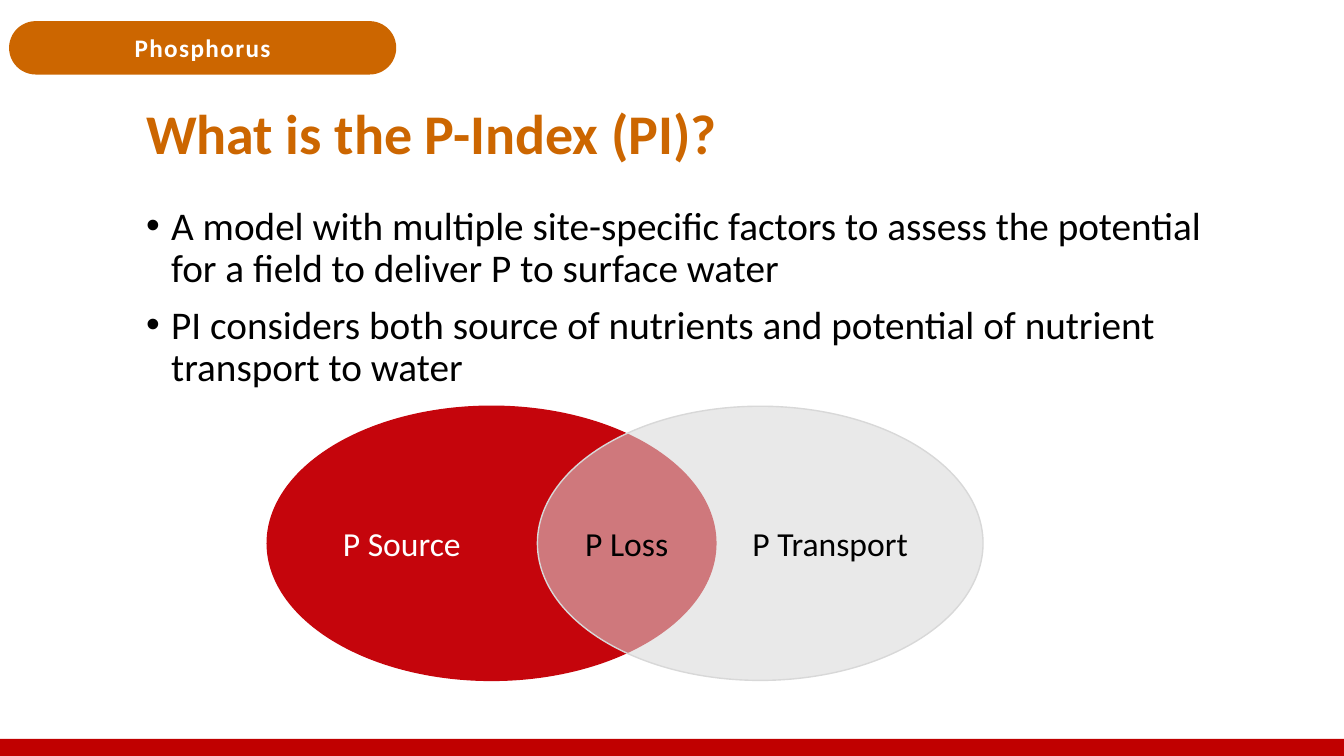
from dataclasses import dataclass

from lxml import etree
from pptx import Presentation
from pptx.dml.color import RGBColor
from pptx.enum.shapes import MSO_SHAPE
from pptx.enum.text import MSO_ANCHOR, MSO_AUTO_SIZE, PP_ALIGN
from pptx.oxml.ns import qn
from pptx.util import Pt

LEFT, CENTER, RIGHT = PP_ALIGN.LEFT, PP_ALIGN.CENTER, PP_ALIGN.RIGHT
TOP, MIDDLE = MSO_ANCHOR.TOP, MSO_ANCHOR.MIDDLE
RECTANGLE, PILL, OVAL = MSO_SHAPE.RECTANGLE, MSO_SHAPE.ROUNDED_RECTANGLE, MSO_SHAPE.OVAL
TITLE_ONLY = 5
EMU_PER_PX = 9144


@dataclass(frozen=True)
class Theme:
    font: str = "Calibri"
    orange: str = "CC6600"
    bar: str = "C00000"
    source: str = "C5050C"
    transport: str = "D8D8D8"
    white: str = "FFFFFF"
    black: str = "000000"
    title_size: int = 40
    body_size: int = 28
    label_size: int = 24
    tag_size: int = 18


THEME = Theme()

SLIDE_WIDTH, SLIDE_HEIGHT = 1333, 750
BAR_HEIGHT = 17
CONTENT_LEFT, CONTENT_WIDTH = 135, 1089
OVAL_TOP, OVAL_HEIGHT = 403, 272
BULLET_INDENT = 25

TAG = "Phosphorus"
TITLE = "What is the P-Index (PI)?"
BULLETS = [
    "A model with multiple site-specific factors to assess the potential for a field to deliver P to surface water",
    "PI considers both source of nutrients and potential of nutrient transport to water",
]
OVALS = [
    dict(text="P Source", left=265, width=445, fill=THEME.source, alpha=100,
         color=THEME.white, align=LEFT),
    dict(text="P Transport", left=533, width=442, fill=THEME.transport, alpha=55,
         color=THEME.black, align=RIGHT),
]
OVERLAP = "P Loss"


def px(*lengths):
    return [length * EMU_PER_PX for length in lengths]


def write(shape, text, size, color=THEME.black, bold=False, align=LEFT, anchor=MIDDLE,
          line_spacing=1.0, space_before=0, tracking=0, bullet=False):
    frame = shape.text_frame
    frame.word_wrap = True
    frame.auto_size = MSO_AUTO_SIZE.NONE
    frame.vertical_anchor = anchor
    lines = [text] if isinstance(text, str) else text
    for index, line in enumerate(lines):
        paragraph = frame.add_paragraph() if index else frame.paragraphs[0]
        paragraph.alignment = align
        paragraph.line_spacing = line_spacing
        paragraph.space_before = Pt(space_before if index else 0)
        if bullet:
            properties = paragraph._p.get_or_add_pPr()
            indent = BULLET_INDENT * EMU_PER_PX
            properties.set("marL", str(indent))
            properties.set("indent", str(-indent))
            etree.SubElement(properties, qn("a:buFont"), typeface="Arial")
            etree.SubElement(properties, qn("a:buChar"), char="•")
        run = paragraph.add_run()
        run.text = line
        run.font.name = THEME.font
        run.font.size = Pt(size)
        run.font.bold = bold
        run.font.color.rgb = RGBColor.from_string(color)
        if tracking:
            run.font._element.set("spc", str(tracking * 100))


def add_filled(slide, kind, box, fill, line=None, alpha=100):
    shape = slide.shapes.add_shape(kind, *px(*box))
    shape.shadow.inherit = False
    shape.fill.solid()
    shape.fill.fore_color.rgb = RGBColor.from_string(fill)
    if alpha < 100:
        color = shape.fill._xPr.find(qn("a:solidFill"))[0]
        etree.SubElement(color, qn("a:alpha"), val=str(alpha * 1000))
    if line:
        shape.line.color.rgb = RGBColor.from_string(line)
        shape.line.width = Pt(1)
    else:
        shape.line.fill.background()
    return shape


def main():
    presentation = Presentation()
    presentation.slide_width, presentation.slide_height = px(SLIDE_WIDTH, SLIDE_HEIGHT)
    slide = presentation.slides.add_slide(presentation.slide_layouts[TITLE_ONLY])

    add_filled(slide, RECTANGLE, (0, SLIDE_HEIGHT - BAR_HEIGHT, SLIDE_WIDTH, BAR_HEIGHT), THEME.bar)
    tag = add_filled(slide, PILL, (9, 21, 384, 53), THEME.orange)
    tag.adjustments[0] = 0.5
    write(tag, TAG, THEME.tag_size, color=THEME.white, bold=True, align=CENTER, tracking=1)

    title = slide.shapes.title
    title.left, title.top, title.width, title.height = px(CONTENT_LEFT, 85, CONTENT_WIDTH, 100)
    write(title, TITLE, THEME.title_size, color=THEME.orange, bold=True, line_spacing=0.9)

    body = slide.shapes.add_textbox(*px(CONTENT_LEFT, 200, CONTENT_WIDTH, 476))
    write(body, BULLETS, THEME.body_size, anchor=TOP, line_spacing=0.9, space_before=10, bullet=True)

    for oval in OVALS:
        box = (oval["left"], OVAL_TOP, oval["width"], OVAL_HEIGHT)
        shape = add_filled(slide, OVAL, box, oval["fill"], line=oval["fill"], alpha=oval["alpha"])
        write(shape, oval["text"], THEME.label_size, color=oval["color"], align=oval["align"])

    overlap = slide.shapes.add_textbox(*px(564, 514, 115, 50))
    write(overlap, OVERLAP, THEME.label_size, align=CENTER, anchor=TOP)

    presentation.save("out.pptx")


if __name__ == "__main__":
    main()
